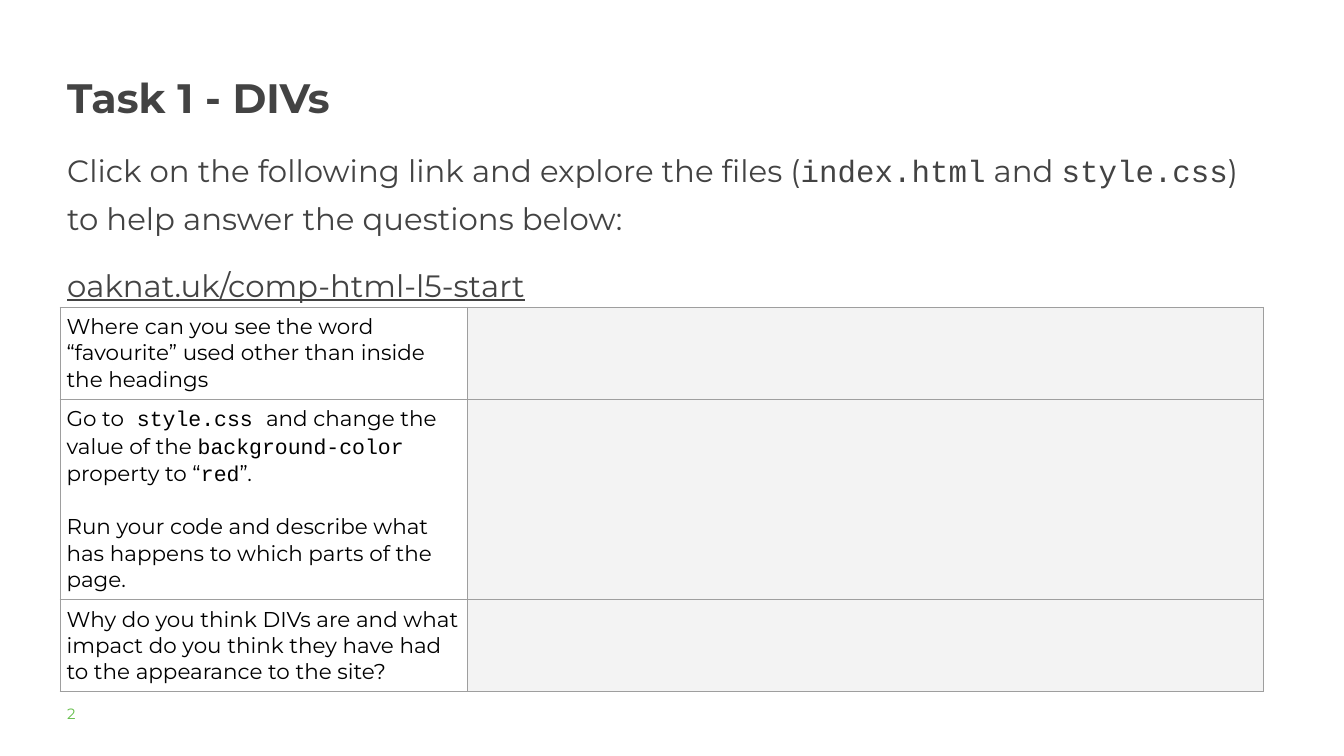
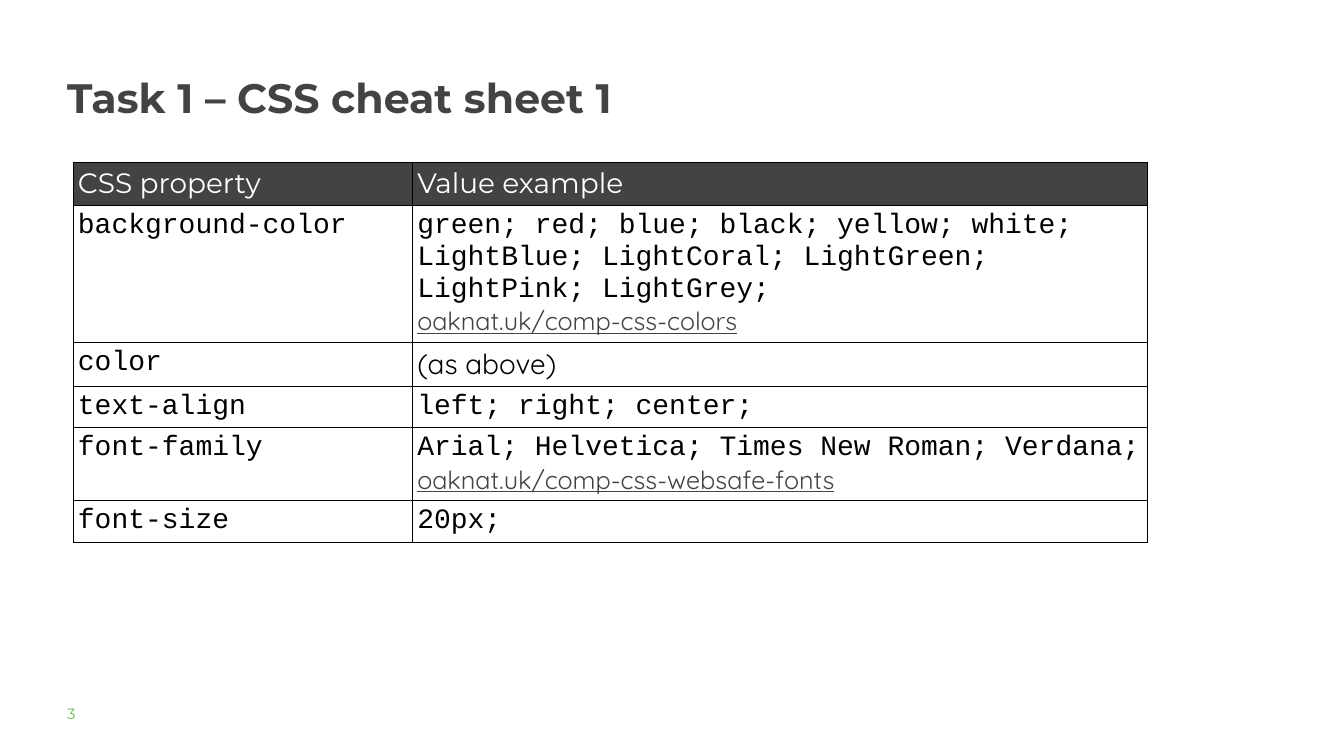
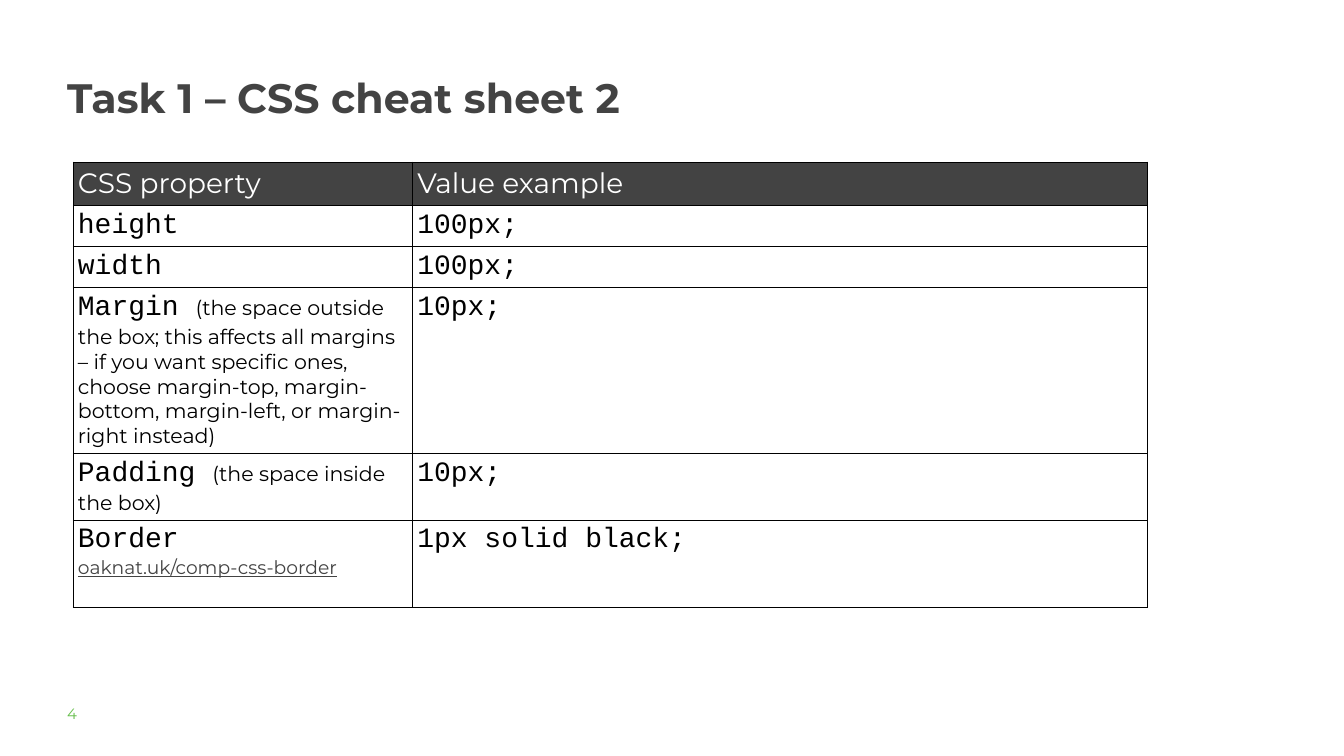
from dataclasses import dataclass, replace

from lxml import etree
from pptx import Presentation
from pptx import util as u
from pptx.dml.color import RGBColor
from pptx.enum import text
from pptx.oxml import ns

GRID = u.Inches(1)
COLUMNS, ROWS = 20, 11.25
MARGIN = 1

CHARCOAL = RGBColor(0x43, 0x43, 0x43)
GREEN = RGBColor(0x65, 0xBE, 0x4B)
BLACK = RGBColor(0, 0, 0)
WHITE = RGBColor(0xFF, 0xFF, 0xFF)
ANSWER_GREY = RGBColor(0xF3, 0xF3, 0xF3)
RULE_GREY = RGBColor(0x9E, 0x9E, 0x9E)
SANS, CODE, ROUND = "Montserrat", "Courier New", "Quicksand"

TITLE_BOX = (MARGIN, 0.97, 8.64, 1.78)
INTRO_BOX = (MARGIN, 2.09, 17.69, 2.69)
NUMBER_BOX = (MARGIN, 10.48, 1.57, 0.39)
QUESTION_BOX = (0.89, 4.57, 17.91, 5.7)
SHEET_LEFT, SHEET_TOP, SHEET_WIDTH = 1.09, 2.41, 15.99


@dataclass(frozen=True)
class Style:
    """How a run of text looks."""
    size: float
    font: str = SANS
    colour: RGBColor = BLACK
    bold: bool = False
    underline: bool = False


TITLE = Style(44, colour=CHARCOAL, bold=True)
NUMBER = Style(16, colour=GREEN)
INTRO = Style(33, colour=CHARCOAL)
INTRO_CODE = replace(INTRO, font=CODE)
INTRO_LINK = replace(INTRO, underline=True)
QUESTION = Style(23)
QUESTION_CODE = replace(QUESTION, font=CODE)
HEADING = Style(30, colour=WHITE)
PROPERTY = Style(30, CODE)
REMARK = Style(30, ROUND)
EXPLANATION = Style(22)
LINK = Style(27, ROUND, CHARCOAL, underline=True)
SMALL_LINK = replace(LINK, size=20, font=SANS)

INTRO_TEXT = [
    [("Click on the following link and explore the files (", INTRO), ("index.html", INTRO_CODE),
     (" and ", INTRO), ("style.css", INTRO_CODE),
     (") to help answer the questions below:", INTRO)],
    [("oaknat.uk/comp-html-l5-start", INTRO_LINK)],
]

QUESTIONS = [
    [[("Where can you see the word “favourite” used other than inside the headings", QUESTION)]],
    [[("Go to", QUESTION), (" style.css ", QUESTION_CODE),
      ("and change the value of the ", QUESTION), ("background-color", QUESTION_CODE),
      (" property to “", QUESTION), ("red", QUESTION_CODE), ("”.", QUESTION)],
     [("Run your code and describe what has happens to which parts of the page.", QUESTION)]],
    [[("Why do you think DIVs are and what impact do you think they have had "
       "to the appearance to the site?", QUESTION)]],
]


def line(words, style=PROPERTY):
    """Return a paragraph made of one run."""
    return [(words, style)]


SHEETS = [
    ("Task 1 – CSS cheat sheet 1", (0.65, 2.03, 0.65, 0.61, 1.09, 0.61), [
        ([line("background-color")],
         [line("green; red; blue; black; yellow; white; LightBlue; LightCoral; "
               "LightGreen; LightPink; LightGrey;"),
          line("oaknat.uk/comp-css-colors", LINK)]),
        ([line("color")], [line("(as above)", REMARK)]),
        ([line("text-align")], [line("left; right; center;")]),
        ([line("font-family")],
         [line("Arial; Helvetica; Times New Roman; Verdana;"),
          line("oaknat.uk/comp-css-websafe-fonts", LINK)]),
        ([line("font-size")], [line("20px;")]),
    ]),
    ("Task 1 – CSS cheat sheet 2", (0.65, 0.61, 0.61, 2.47, 0.98, 1.3), [
        ([line("height")], [line("100px;")]),
        ([line("width")], [line("100px;")]),
        ([[("Margin ", PROPERTY),
           ("(the space outside the box; this affects all margins – if you want specific ones, "
            "choose margin-top, margin-bottom, margin-left, or margin-right instead)",
            EXPLANATION)]],
         [line("10px;")]),
        ([[("Padding ", PROPERTY), ("(the space inside the box)", EXPLANATION)]],
         [line("10px;")]),
        ([line("Border"), line("oaknat.uk/comp-css-border", SMALL_LINK)],
         [line("1px solid black;")]),
    ]),
]


def on_grid(box):
    """Turn grid columns and rows into lengths."""
    return [u.Emu(round(GRID * length)) for length in box]


def write(frame, paragraphs, spacing=1.0, gap=0):
    """Fill a text frame with paragraphs of styled runs."""
    frame.word_wrap = True
    for index, runs in enumerate(paragraphs):
        paragraph = frame.add_paragraph() if index else frame.paragraphs[0]
        paragraph.alignment = text.PP_ALIGN.LEFT
        paragraph.line_spacing = spacing
        paragraph.space_before = u.Pt(gap if index else 0)
        for words, style in runs:
            run = paragraph.add_run()
            run.text = words
            run.font.name, run.font.size = style.font, u.Pt(style.size)
            run.font.color.rgb = style.colour
            run.font.bold, run.font.underline = style.bold, style.underline


def set_margins(holder, margin):
    """Give a cell or text frame equal margins."""
    holder.margin_left = holder.margin_right = u.Inches(margin)
    holder.margin_top = holder.margin_bottom = u.Inches(margin)


def place_text(shape, box, paragraphs, spacing=1.0, gap=0):
    """Place a text shape in its box and fill it from the top."""
    shape.left, shape.top, shape.width, shape.height = on_grid(box)
    frame = shape.text_frame
    set_margins(frame, 0)
    frame.auto_size = text.MSO_AUTO_SIZE.NONE
    frame.vertical_anchor = text.MSO_ANCHOR.TOP
    write(frame, paragraphs, spacing, gap)


def outline(cell, colour, points):
    """Draw the four borders of a cell."""
    properties = cell._tc.get_or_add_tcPr()
    for side in ("lnL", "lnR", "lnT", "lnB"):
        border = etree.SubElement(properties, ns.qn(f"a:{side}"), w=str(u.Pt(points)))
        fill = etree.SubElement(border, ns.qn("a:solidFill"))
        etree.SubElement(fill, ns.qn("a:srgbClr"), val=str(colour))


def add_grid_table(slide, box, columns, rows, contents, fill_of, margin, border, gap=0):
    """Add a table whose columns and rows share out its box."""
    left, top, width, height = on_grid(box)
    table = slide.shapes.add_table(len(rows), len(columns), left, top, width, height).table
    table.first_row = table.horz_banding = False
    for column, share in zip(table.columns, columns):
        column.width = round(width * share / sum(columns))
    for row, share in zip(table.rows, rows):
        row.height = round(height * share / sum(rows))
    for r, entries in enumerate(contents):
        for c, paragraphs in enumerate(entries):
            cell = table.cell(r, c)
            set_margins(cell, margin)
            outline(cell, *border)
            colour = fill_of(r, c)
            if colour is None:
                cell.fill.background()
            else:
                cell.fill.solid()
                cell.fill.fore_color.rgb = colour
            write(cell.text_frame, paragraphs, gap=gap)


def add_task_slide(prs, title, number):
    """Add a slide with its title and green page number."""
    slide = prs.slides.add_slide(prs.slide_layouts[5])
    place_text(slide.shapes.title, TITLE_BOX, [line(title, TITLE)], 1.15)
    place_text(slide.shapes.add_textbox(0, 0, 0, 0), NUMBER_BOX, [line(str(number), NUMBER)])
    return slide


def add_questions(prs, number):
    """Add the slide with the link and a table for answers."""
    slide = add_task_slide(prs, "Task 1 - DIVs", number)
    place_text(slide.shapes.add_textbox(0, 0, 0, 0), INTRO_BOX, INTRO_TEXT, 1.3, 20)
    add_grid_table(slide, QUESTION_BOX, (6.07, 11.84), (1.36, 2.98, 1.36),
                   [(question, []) for question in QUESTIONS],
                   lambda r, c: ANSWER_GREY if c else None, 0.1, (RULE_GREY, 0.75), gap=28)


def add_cheat_sheet(prs, number, title, rows, entries):
    """Add a slide that lists CSS properties with example values."""
    slide = add_task_slide(prs, title, number)
    headings = ([line("CSS property", HEADING)], [line("Value example", HEADING)])
    add_grid_table(slide, (SHEET_LEFT, SHEET_TOP, SHEET_WIDTH, sum(rows)), (5.05, 10.94), rows,
                   [headings, *entries], lambda r, c: None if r else CHARCOAL, 0.07, (BLACK, 1))


def main():
    """Build the three slides and save them."""
    prs = Presentation()
    prs.slide_width, prs.slide_height = on_grid((COLUMNS, ROWS))
    add_questions(prs, 2)
    for number, sheet in enumerate(SHEETS, 3):
        add_cheat_sheet(prs, number, *sheet)
    prs.save("out.pptx")


if __name__ == "__main__":
    main()
